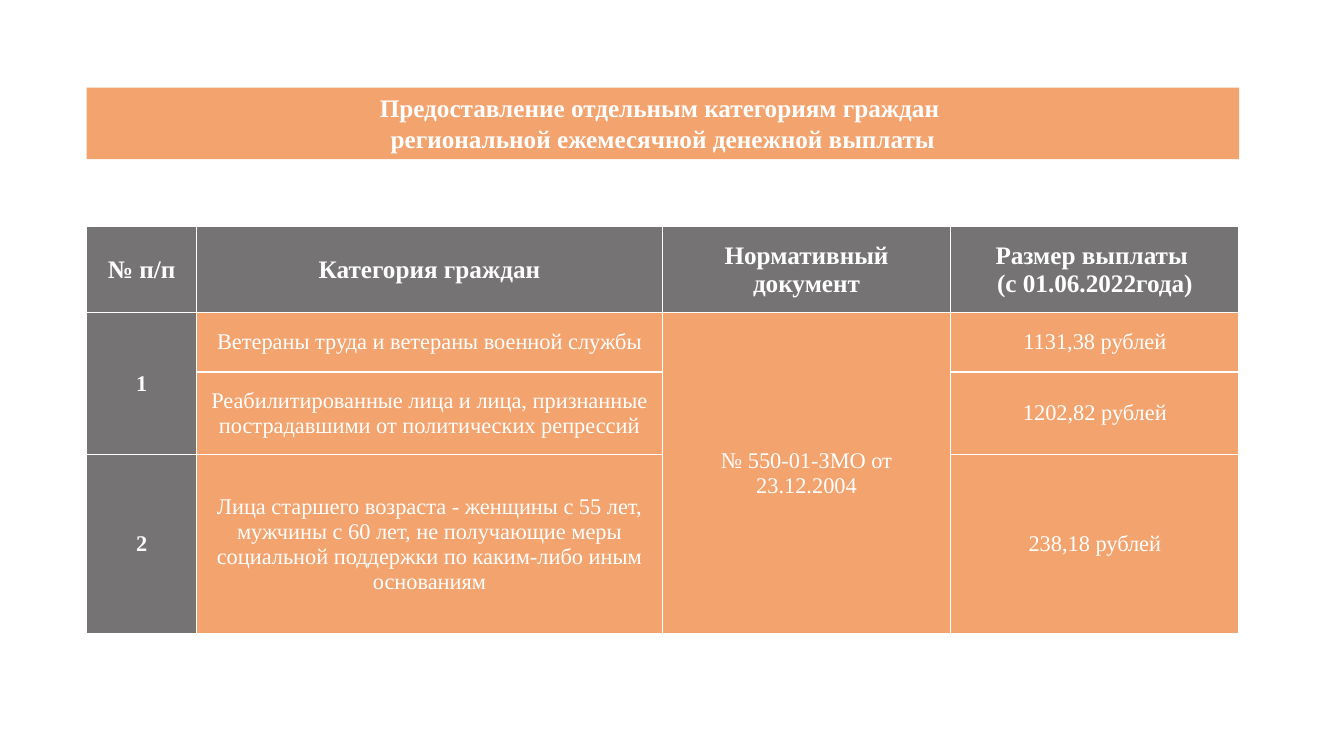
import pptx
import pptx.util
import pptx.dml.color
import pptx.enum.shapes
import pptx.enum.text
import pptx.oxml
import pptx.oxml.ns
from lxml import etree

COLOURS = {"orange": "ED7D31", "grey": "3B3838", "white": "FFFFFF"}
FONT = "Times New Roman"
LEFT, WIDTH = 0.86, 11.43
COLUMNS = [1.09, 4.62, 2.86, 2.86]
ROWS = [0.85, 0.59, 0.82, 1.78]
CELLS = [
    ["№ п/п", "Категория граждан", "Нормативный документ", "Размер выплаты \n(с 01.06.2022года)"],
    ["1", "Ветераны труда и ветераны военной службы", "№ 550-01-ЗМО от 23.12.2004", "1131,38 рублей"],
    ["", "Реабилитированные лица и лица, признанные пострадавшими от политических репрессий", "", "1202,82 рублей"],
    ["2", "Лица старшего возраста - женщины с 55 лет, мужчины с 60 лет, не получающие меры социальной поддержки по каким-либо иным основаниям", "", "238,18 рублей"],
]


def paint(fill, properties, colour):
    fill.solid()
    fill.fore_color.rgb = pptx.dml.color.RGBColor.from_string(COLOURS[colour])
    for tint in properties.iter(pptx.oxml.ns.qn("a:srgbClr")):
        etree.SubElement(tint, pptx.oxml.ns.qn("a:alpha"), val="70000")


def write(frame, text, size, bold):
    frame.text = text
    for para in frame.paragraphs:
        para.alignment = pptx.enum.text.PP_ALIGN.CENTER
        para.font.name = FONT
        para.font.size = pptx.util.Pt(size)
        para.font.bold = bold
        para.font.color.rgb = pptx.dml.color.RGBColor.from_string(COLOURS["white"])


deck = pptx.Presentation()
deck.slide_width = pptx.util.Inches(13.33)
deck.slide_height = pptx.util.Inches(7.5)
page = deck.slides.add_slide(deck.slide_layouts[6])

banner = page.shapes.add_shape(
    pptx.enum.shapes.MSO_SHAPE.RECTANGLE,
    *[pptx.util.Inches(length) for length in (LEFT, 0.87, WIDTH, 0.71)])
banner.shadow.inherit = False
paint(banner.fill, banner._element.spPr, "orange")
banner.line.fill.background()
banner.text_frame.word_wrap = True
banner.text_frame.auto_size = pptx.enum.text.MSO_AUTO_SIZE.SHAPE_TO_FIT_TEXT
banner.text_frame.vertical_anchor = pptx.enum.text.MSO_ANCHOR.TOP
write(banner.text_frame,
      "Предоставление отдельным категориям граждан \nрегиональной ежемесячной денежной выплаты",
      18, True)

table = page.shapes.add_table(
    len(ROWS), len(COLUMNS),
    *[pptx.util.Inches(length) for length in (LEFT, 2.25, WIDTH, sum(ROWS))]).table
table.first_row = False
table.horz_banding = False
for column, width in zip(table.columns, COLUMNS):
    column.width = pptx.util.Inches(width)
for row, height in zip(table.rows, ROWS):
    row.height = pptx.util.Inches(height)
table.cell(1, 0).merge(table.cell(2, 0))
table.cell(1, 2).merge(table.cell(3, 2))

for row, texts in enumerate(CELLS):
    for column, text in enumerate(texts):
        cell = table.cell(row, column)
        heading = row == 0 or column == 0
        cell.vertical_anchor = pptx.enum.text.MSO_ANCHOR.MIDDLE
        write(cell.text_frame, text, 18 if row == 0 else 16, heading)
        properties = cell._tc.get_or_add_tcPr()
        paint(cell.fill, properties, "grey" if heading else "orange")
        for place, side in enumerate(("lnL", "lnR", "lnT", "lnB")):
            properties.insert(place, pptx.oxml.parse_xml(
                f'<a:{side} {pptx.oxml.ns.nsdecls("a")} w="12700"><a:solidFill>'
                f'<a:srgbClr val="{COLOURS["white"]}"/></a:solidFill></a:{side}>'))

deck.save("out.pptx")
